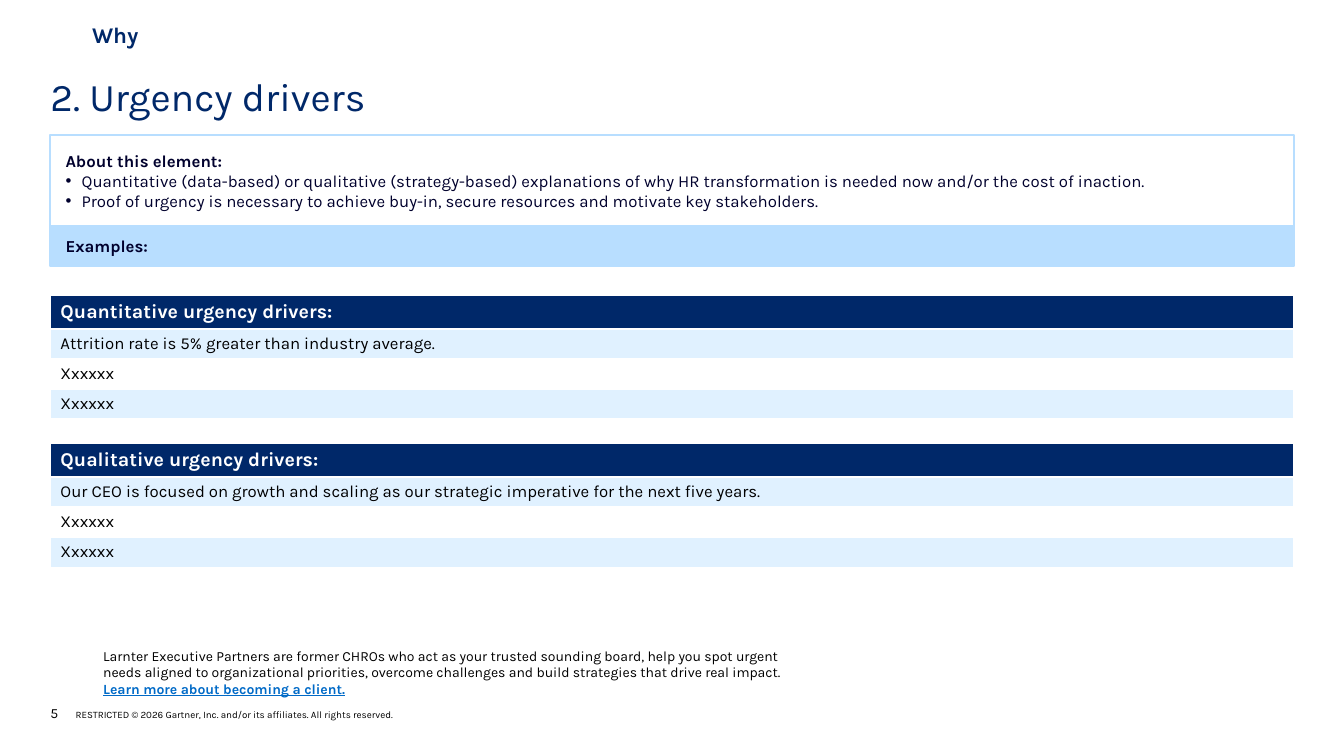
from dataclasses import dataclass

from lxml import etree
from pptx import Presentation
from pptx.dml.color import RGBColor
from pptx.enum.shapes import MSO_SHAPE
from pptx.enum.text import MSO_ANCHOR, MSO_AUTO_SIZE, PP_ALIGN
from pptx.oxml.ns import qn
from pptx.util import Pt

RECT = MSO_SHAPE.RECTANGLE
TOP, MIDDLE, BOTTOM = MSO_ANCHOR.TOP, MSO_ANCHOR.MIDDLE, MSO_ANCHOR.BOTTOM
LEFT = PP_ALIGN.LEFT
NO_FIT = MSO_AUTO_SIZE.NONE


@dataclass(frozen=True)
class Theme:
    font: str = "Karla"
    navy: str = "002869"
    ink: str = "00002D"
    black: str = "000000"
    white: str = "FFFFFF"
    sky: str = "B8DEFF"
    pale: str = "E0F1FF"
    link: str = "006AC7"
    title: float = 28
    tag: float = 16
    head: float = 14
    body: float = 12
    note: float = 10
    legal: float = 7


T = Theme()
EDGE, WIDE = 36, 888
RULE = 1.5


def style(para, size, color, bold=False):
    para.alignment = LEFT
    para.space_before = Pt(0)
    font = para.font
    font.name, font.size, font.bold = T.font, Pt(size), bold
    font.color.rgb = RGBColor.from_string(color)


def frame(shape, box, anchor=TOP, side=0, vert=0):
    """Place a shape and set the insets of its text; return the text frame."""
    shape.left, shape.top, shape.width, shape.height = map(Pt, box)
    text = shape.text_frame
    text.word_wrap, text.auto_size = True, NO_FIT
    text.vertical_anchor = anchor
    text.margin_left = text.margin_right = Pt(side)
    text.margin_top = text.margin_bottom = Pt(vert)
    return text


deck = Presentation()
deck.slide_width, deck.slide_height = Pt(960), Pt(540)
slide = deck.slides.add_slide(deck.slide_layouts[1])
shapes = slide.shapes
sky = RGBColor.from_string(T.sky)

# Title and section tag
title = frame(shapes.title, (EDGE, 52, WIDE, 35.3))
title.text = "2. Urgency drivers"
style(title.paragraphs[0], T.title, T.navy)

tag = frame(shapes.add_textbox(0, 0, 0, 0), (65.8, 17.5, 206, 15), MIDDLE)
tag.text = "Why"
style(tag.paragraphs[0], T.tag, T.navy, True)

# About box
about = slide.placeholders[1]
about.line.color.rgb, about.line.width = sky, Pt(RULE)
text = frame(about, (EDGE, 96.7, WIDE, 65.3), TOP, 10.8, 10.8)
text.text = "\n".join([
    "About this element:",
    "Quantitative (data-based) or qualitative (strategy-based) explanations of "
    "why HR transformation is needed now and/or the cost of inaction.",
    "Proof of urgency is necessary to achieve buy-in, secure resources and "
    "motivate key stakeholders.",
])
for i, para in enumerate(text.paragraphs):
    props = para._p.get_or_add_pPr()
    indent = Pt(11.5) if i else 0
    props.set("marL", str(indent))
    props.set("indent", str(-indent))
    if i:
        etree.SubElement(props, qn("a:buFont"), typeface="Arial")
        etree.SubElement(props, qn("a:buChar"), char="•")
    else:
        etree.SubElement(props, qn("a:buNone"))
    style(para, T.body, T.ink, i == 0)

# Examples bar
bar = shapes.add_shape(RECT, 0, 0, 0, 0)
bar.shadow.inherit = False
bar.fill.solid()
bar.fill.fore_color.rgb = sky
bar.line.color.rgb, bar.line.width = sky, Pt(RULE)
text = frame(bar, (EDGE, 161.5, WIDE, 28.7), TOP, 10.8, 7.2)
text.text = "Examples:"
style(text.paragraphs[0], T.body, T.ink, True)

# Driver tables
HEAD, ROW = 23.7, 21.6
drivers = [
    (211, "Quantitative urgency drivers:",
     "Attrition rate is 5% greater than industry average."),
    (317, "Qualitative urgency drivers:",
     "Our CEO is focused on growth and scaling as our strategic imperative "
     "for the next five years."),
]
for top, head, first in drivers:
    rows = [head, first, "Xxxxxx", "Xxxxxx"]
    grid = shapes.add_table(len(rows), 1, Pt(EDGE), Pt(top), Pt(WIDE),
                            Pt(HEAD + 3 * ROW)).table
    grid.horz_banding = False
    for i, words in enumerate(rows):
        grid.rows[i].height = Pt(ROW if i else HEAD)
        cell = grid.cell(i, 0)
        cell.text = words
        props = cell._tc.get_or_add_tcPr()
        for side in ("L", "R", "T", "B") if i else ("B",):
            line = etree.SubElement(props, qn("a:ln" + side), w=str(Pt(RULE)))
            fill = etree.SubElement(line, qn("a:solidFill"))
            etree.SubElement(fill, qn("a:srgbClr"), val=T.white)
        cell.fill.solid()
        shade = (T.pale if i % 2 else T.white) if i else T.navy
        if i == 3:
            shade = T.pale
        cell.fill.fore_color.rgb = RGBColor.from_string(shade)
        if i:
            style(cell.text_frame.paragraphs[0], T.body, T.black)
        else:
            style(cell.text_frame.paragraphs[0], T.head, T.white, True)

# Client note
note = frame(shapes.add_textbox(0, 0, 0, 0), (73.7, 462.2, 500, 36))
note.text = (
    "Larnter Executive Partners are former CHROs who act as your trusted "
    "sounding board, help you spot urgent needs aligned to organizational "
    "priorities, overcome challenges and build strategies that drive real "
    "impact.\nLearn more about becoming a client."
)
style(note.paragraphs[0], T.note, T.black)
style(note.paragraphs[1], T.note, T.link, True)
note.paragraphs[1].font.underline = True

# Footer
foot = frame(shapes.add_textbox(0, 0, 0, 0), (EDGE, 503.3, 575, 12.2), BOTTOM)
para = foot.paragraphs[0]
props = para._p.get_or_add_pPr()
props.set("marL", str(Pt(18)))
props.set("indent", str(Pt(-18)))
style(para, T.note, T.black)
para.add_run().text = "5"
legal = para.add_run()
legal.text = ("\tRESTRICTED © 2026 Gartner, Inc. and/or its affiliates. "
              "All rights reserved.")
legal.font.size = Pt(T.legal)

deck.save("out.pptx")
